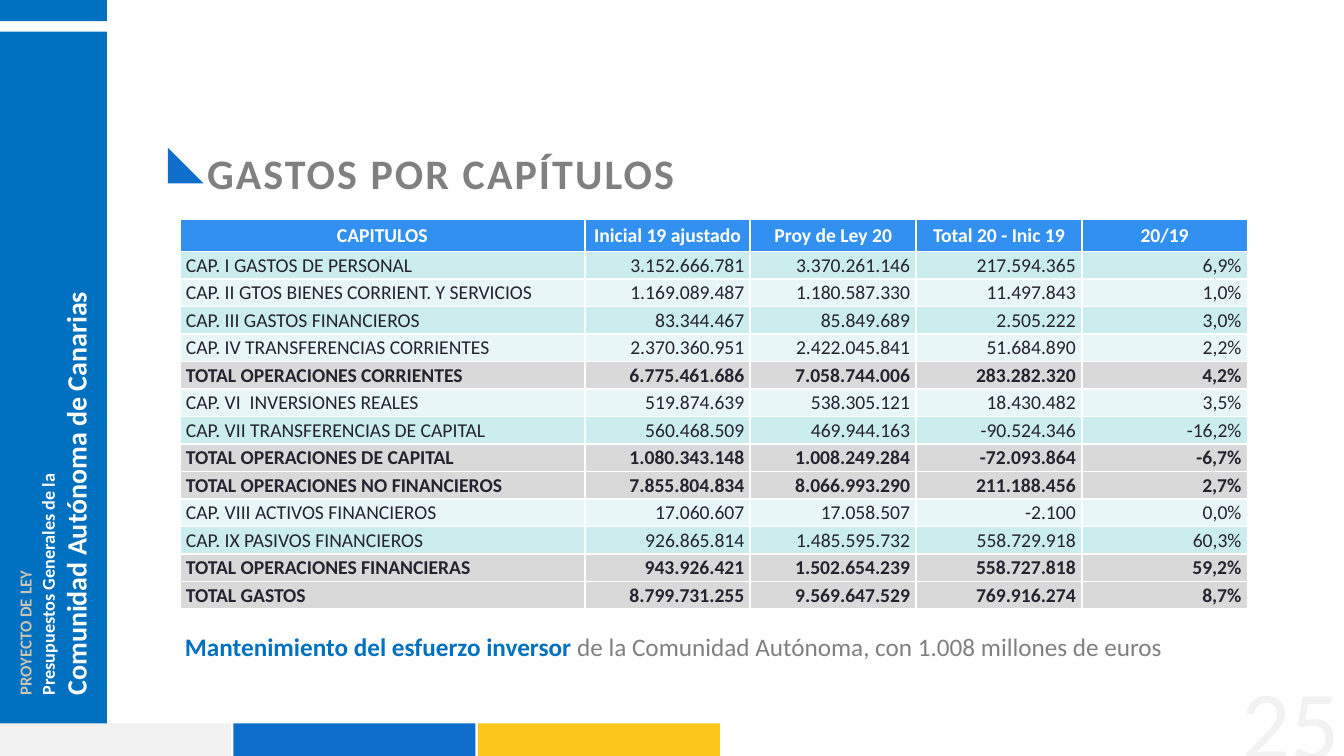
from lxml import etree
from pptx import Presentation
from pptx.dml.color import RGBColor
from pptx.enum.shapes import MSO_SHAPE
from pptx.enum.text import MSO_ANCHOR, PP_ALIGN
from pptx.oxml.ns import qn
from pptx.util import Inches, Pt

RECT, WEDGE = MSO_SHAPE.RECTANGLE, MSO_SHAPE.RIGHT_TRIANGLE
LEFT, MID, RIGHT = PP_ALIGN.LEFT, PP_ALIGN.CENTER, PP_ALIGN.RIGHT
MIDDLE = MSO_ANCHOR.MIDDLE

THEME = {
    "font": "Calibri",
    "color": {"rail": "0070C0", "pale": "F2F2F2", "blue": "0F6DCB", "gold": "FBC71A",
              "sand": "C8C5B4", "white": "FFFFFF", "gray": "808080", "ink": "25232F",
              "head": "3291F0", "odd": "CCEDEE", "even": "E8F6F7", "total": "D9D9D9"},
    "size": {"tag": 24, "sub": 26, "name": 40, "page": 139, "title": 60,
             "cell": 28, "note": 36},
}

HEAD = ("CAPITULOS", "Inicial 19 ajustado", "Proy de Ley 20", "Total 20 - Inic 19", "20/19")
ROWS = [
    ("CAP. I GASTOS DE PERSONAL", "3.152.666.781", "3.370.261.146", "217.594.365", "6,9%"),
    ("CAP. II GTOS BIENES CORRIENT. Y SERVICIOS", "1.169.089.487", "1.180.587.330",
     "11.497.843", "1,0%"),
    ("CAP. III GASTOS FINANCIEROS", "83.344.467", "85.849.689", "2.505.222", "3,0%"),
    ("CAP. IV TRANSFERENCIAS CORRIENTES", "2.370.360.951", "2.422.045.841",
     "51.684.890", "2,2%"),
    ("TOTAL OPERACIONES CORRIENTES", "6.775.461.686", "7.058.744.006", "283.282.320", "4,2%"),
    ("CAP. VI  INVERSIONES REALES", "519.874.639", "538.305.121", "18.430.482", "3,5%"),
    ("CAP. VII TRANSFERENCIAS DE CAPITAL", "560.468.509", "469.944.163",
     "-90.524.346", "-16,2%"),
    ("TOTAL OPERACIONES DE CAPITAL", "1.080.343.148", "1.008.249.284", "-72.093.864", "-6,7%"),
    ("TOTAL OPERACIONES NO FINANCIEROS", "7.855.804.834", "8.066.993.290",
     "211.188.456", "2,7%"),
    ("CAP. VIII ACTIVOS FINANCIEROS", "17.060.607", "17.058.507", "-2.100", "0,0%"),
    ("CAP. IX PASIVOS FINANCIEROS", "926.865.814", "1.485.595.732", "558.729.918", "60,3%"),
    ("TOTAL OPERACIONES FINANCIERAS", "943.926.421", "1.502.654.239", "558.727.818", "59,2%"),
    ("TOTAL GASTOS", "8.799.731.255", "9.569.647.529", "769.916.274", "8,7%"),
]

TAG = [[("PROYECTO DE LEY", "tag", "sand", True)]]
BRAND = [[("Presupuestos Generales de la", "sub", "white", True)],
         [("Comunidad Autónoma de Canarias", "name", "white", True)]]
PAGE = [[("25", "page", "pale", False)]]
TITLE = [[("GASTOS POR CAPÍTULOS", "title", "gray", True)]]
NOTE = [[("Mantenimiento del esfuerzo inversor", "note", "rail", True),
         (" de la Comunidad Autónoma, con 1.008 millones de euros", "note", "gray", False)]]

WIDE, HIGH = Inches(26.67), Inches(15)
EDGE, SPAN = 13.39, 79.42
STEP = 18.19


def across(share):
    return round(WIDE * share / 100)


def down(share):
    return round(HIGH * share / 100)


def place(x, y, w, h):
    return across(x), down(y), across(w), down(h)


def paint(fill, tone):
    fill.solid()
    fill.fore_color.rgb = RGBColor.from_string(THEME["color"][tone])


def style(font, size, tone, bold):
    font.name = THEME["font"]
    font.size = Pt(THEME["size"][size])
    font.bold = bold
    font.color.rgb = RGBColor.from_string(THEME["color"][tone])


def block(slide, kind, box, tone):
    shape = slide.shapes.add_shape(kind, *place(*box))
    shape.shadow.inherit = False
    paint(shape.fill, tone)
    shape.line.fill.background()


def write(slide, box, lines, align=LEFT, turn=0, inset=None):
    shape = slide.shapes.add_textbox(*place(*box))
    shape.rotation = turn
    frame = shape.text_frame
    frame.word_wrap = True
    if inset is not None:
        frame.margin_left = frame.margin_top = frame.margin_bottom = 0
        frame.margin_right = Inches(inset)
    for i, line in enumerate(lines):
        para = frame.add_paragraph() if i else frame.paragraphs[0]
        para.alignment = align
        for text, *look in line:
            run = para.add_run()
            run.text = text
            style(run.font, *look)
    return frame


def border(cell):
    props = cell._tc.get_or_add_tcPr()
    for side in ("lnL", "lnR", "lnT", "lnB"):
        line = etree.SubElement(props, qn("a:" + side), w=str(Pt(3)))
        fill = etree.SubElement(line, qn("a:solidFill"))
        etree.SubElement(fill, qn("a:srgbClr"), val=THEME["color"]["white"])


def fill_cell(cell, text, align, tone, ink, bold):
    cell.margin_left = cell.margin_right = Inches(0.12)
    cell.margin_top, cell.margin_bottom = Inches(0.01), 0
    cell.vertical_anchor = MIDDLE
    border(cell)
    paint(cell.fill, tone)
    para = cell.text_frame.paragraphs[0]
    para.text = text
    para.alignment = align
    style(para.runs[0].font, "cell", ink, bold)


def grid(slide):
    data = [HEAD] + ROWS
    box = place(EDGE, 29, SPAN, 51.6)
    table = slide.shapes.add_table(len(data), len(HEAD), *box).table
    for i, col in enumerate(table.columns):
        col.width = across(12.33 if i else 30.11)
    for i, row in enumerate(data):
        table.rows[i].height = down(3.64 if i else 4.27)
        total = row[0].startswith("TOTAL")
        band = "total" if total else "odd" if i % 2 else "even"
        for j, text in enumerate(row):
            if i:
                look = (RIGHT if j else LEFT, band, "ink", total)
            else:
                look = (MID, "head", "white", True)
            fill_cell(table.cell(i, j), text, *look)


def main():
    deck = Presentation()
    deck.slide_width, deck.slide_height = WIDE, HIGH
    slide = deck.slides.add_slide(deck.slide_layouts[6])

    block(slide, RECT, (-0.34, 4.2, 8.29, 96.73), "rail")
    for i, tone in enumerate(("pale", "blue", "gold")):
        block(slide, RECT, (-0.82 + i * STEP, 95.67, 18, 6.6), tone)
    write(slide, (-22.35, 47.6, 48.41, 2.67), TAG, turn=270, inset=0)
    write(slide, (-10.69, 61.27, 30.71, 6.87), BRAND, turn=270, inset=0.1)
    block(slide, RECT, (-0.34, -0.4, 8.29, 3.2), "rail")

    write(slide, (76.75, 87.27, 23.32, 12.8), PAGE, RIGHT)
    title = write(slide, (15.04, 19.2, 82.23, 5.4), TITLE)
    title.paragraphs[0].runs[0]._r.get_or_add_rPr().set("spc", "300")
    block(slide, WEDGE, (12.49, 19.53, 2.66, 4.73), "blue")
    grid(slide)
    note = write(slide, (EDGE, 82.93, SPAN, 4.8), NOTE).paragraphs[0]
    note.line_spacing, note.space_after = 1.07, Pt(8)
    deck.save("out.pptx")


if __name__ == "__main__":
    main()
